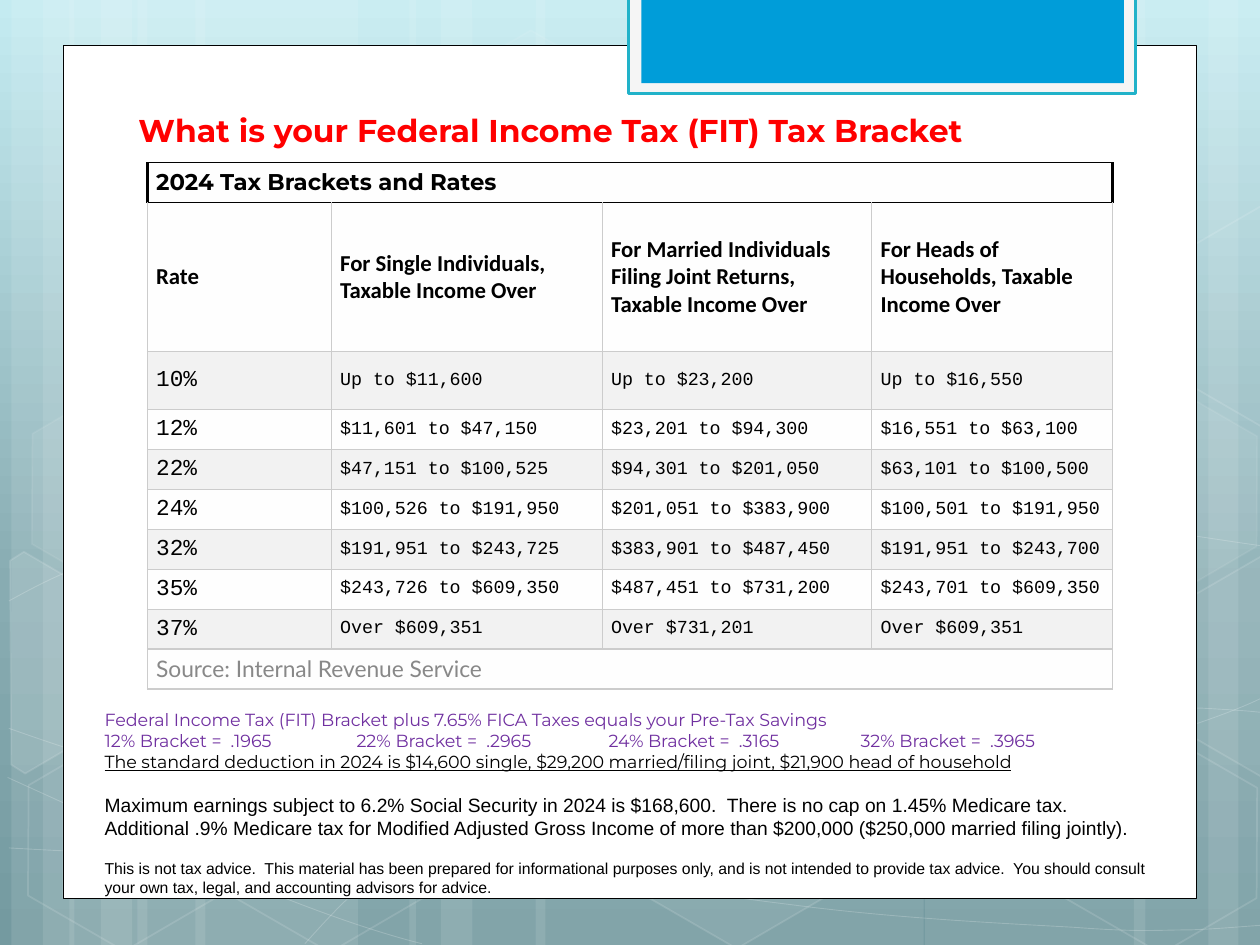
from copy import deepcopy
from dataclasses import dataclass

from lxml.etree import SubElement
from pptx import Presentation
from pptx.dml.color import RGBColor
from pptx.enum.shapes import MSO_SHAPE as Shape
from pptx.enum.text import MSO_ANCHOR as Anchor
from pptx.oxml.ns import qn
from pptx.util import Inches, Pt


@dataclass(frozen=True)
class Theme:
    sky: tuple = ((0, "C4EBF1"), (0.62, "88ACB2"), (1, "749AA0"))
    white: str = "FFFFFF"
    black: str = "000000"
    red: str = "FF0000"
    purple: str = "7030A0"
    grey: str = "888888"
    grid: str = "CCCCCC"
    row: str = "FEFEFE"
    band: str = "F2F2F2"
    frame: str = "F5F5F5"
    teal: str = "21B2C9"
    blue: str = "009DD9"
    title: float = 18
    head: float = 13
    amount: float = 10.5
    note: float = 10
    detail: float = 11
    small: float = 9


T = Theme()

BANDS = [(1.09, 1.75), (0.09, 0.5), (0.34, 0.83), (1.55, 1.75), (0.55, 0.5), (0.8, 0.83),
         (7.34, 1.75), (9.59, 0.5), (9, 0.83), (4.25, 3.08), (3.25, 0.5), (3.5, 0.83)]
CURVES = [
    [(0.07, 6.73), (0.61, 6.76), (1.15, 6.79), (1.9, 6.78), (2.65, 6.77), (3.58, 6.75),
     (4.58, 6.65), (5.58, 6.55), (7, 6.36), (7.92, 6.17), (8.83, 5.98), (9.77, 5.68), (10.07, 5.51)],
    [(0.07, 4.77), (0.36, 4.61), (0.65, 4.46), (1.21, 4.31), (1.78, 4.16), (2.59, 3.94),
     (3.47, 3.87), (4.36, 3.8), (5.44, 3.79), (6.54, 3.87), (7.64, 3.95), (9.47, 4.26), (10.07, 4.34)],
    [(0.06, 6.17), (1.27, 6.72), (2.47, 7.27), (3.35, 7.49)],
    [(0.07, 5.78), (0.38, 5.89), (0.7, 6), (1.28, 6.16), (1.86, 6.31), (2.73, 6.56), (3.57, 6.73),
     (4.4, 6.9), (5.45, 7.08), (6.28, 7.18), (7.11, 7.29), (8, 7.33), (8.53, 7.36),
     (9.06, 7.4), (9.19, 7.38), (9.45, 7.38), (9.71, 7.37), (9.89, 7.35), (10.07, 7.34)],
    [(2.42, 7.49), (2.6, 7.29), (2.78, 7.09), (3.02, 6.91), (3.26, 6.72), (3.6, 6.53), (3.88, 6.39),
     (4.16, 6.25), (4.33, 6.19), (4.69, 6.09), (5.06, 5.99), (5.73, 5.85), (6.08, 5.78),
     (6.44, 5.71), (6.49, 5.71), (6.8, 5.69), (7.11, 5.66), (7.6, 5.63), (7.94, 5.62),
     (8.29, 5.61), (8.86, 5.62), (8.86, 5.62), (9.08, 5.62), (9.31, 5.62), (9.53, 5.62),
     (9.71, 5.63), (9.88, 5.64), (9.97, 5.65), (10.06, 5.66), (10.03, 5.65), (10.06, 5.66)],
]
HEXAGONS = [(3.34, 0.36, 4, 8), (4.97, 5.89, 6, 12), (0.11, 5.91, 0, 12), (0.14, 3.12, 7, 8),
            (1.74, 5.92, 0, 12), (8.34, 5.93, 0, 12), (8.34, 3.14, 7, 8)]
CUT_HEXAGONS = [
    ([(0.08, 4.45), (0.19, 4.38), (0.96, 4.83), (0.95, 5.7), (0.2, 6.14), (0.09, 6.07)], 10),
    ([(9.26, 4.85), (10.02, 4.41), (10.09, 4.46), (10.09, 6.13), (10.02, 6.17), (9.26, 5.73)], 4),
    ([(9.26, 2.07), (10.02, 1.63), (10.1, 1.68), (10.09, 3.35), (10.02, 3.39), (9.26, 2.95)], 0),
]
COLUMNS = [1.46, 2.15, 2.14, 1.91]
HEIGHTS = [0.32, 1.18, 0.46] + [2.22 / 7] * 7
ROWS = [
    ("2024 Tax Brackets and Rates", "", "", ""),
    ("Rate", "For Single Individuals, Taxable Income Over",
     "For Married Individuals Filing Joint Returns, Taxable Income Over",
     "For Heads of Households, Taxable Income Over"),
    ("10%", "Up to $11,600", "Up to $23,200", "Up to $16,550"),
    ("12%", "$11,601 to $47,150", "$23,201 to $94,300", "$16,551 to $63,100"),
    ("22%", "$47,151 to $100,525", "$94,301 to $201,050", "$63,101 to $100,500"),
    ("24%", "$100,526 to $191,950", "$201,051 to $383,900", "$100,501 to $191,950"),
    ("32%", "$191,951 to $243,725", "$383,901 to $487,450", "$191,951 to $243,700"),
    ("35%", "$243,726 to $609,350", "$487,451 to $731,200", "$243,701 to $609,350"),
    ("37%", "Over $609,351", "Over $731,201", "Over $609,351"),
    ("Source: Internal Revenue Service", "", "", ""),
]


def rgb(color):
    return RGBColor.from_string(color)


def fade(sp, where, percent):
    for clr in sp._element.xpath(f"./p:spPr/{where}a:solidFill/a:srgbClr"):
        SubElement(clr, qn("a:alpha"), val=str(percent * 1000))


def style(sp, fill=None, line=None, width=1, fill_alpha=100, line_alpha=100):
    sp.shadow.inherit = False
    if fill and fill_alpha:
        sp.fill.solid()
        sp.fill.fore_color.rgb = rgb(fill)
        fade(sp, "", fill_alpha)
    else:
        sp.fill.background()
    if line:
        sp.line.color.rgb = rgb(line)
        sp.line.width = Pt(width)
        fade(sp, "a:ln/", line_alpha)
    else:
        sp.line.fill.background()
    return sp


def add_box(s, x, y, w, h, kind=Shape.RECTANGLE, **fmt):
    sp = s.shapes.add_shape(kind, Inches(x), Inches(y), Inches(w), Inches(h))
    return style(sp, **fmt)


def add_outline(s, points, close=False, **fmt):
    start, *rest = [(Inches(x), Inches(y)) for x, y in points]
    builder = s.shapes.build_freeform(*start)
    builder.add_line_segments(rest, close=close)
    return style(builder.convert_to_shape(), **fmt)


def add_curve(s, knots, **fmt):
    sp = add_outline(s, knots, **fmt)
    outline = sp._element.xpath(".//a:pathLst/*")[0]
    segments = outline.findall(qn("a:lnTo"))
    for i in range(0, len(segments), 3):
        curve = SubElement(outline, qn("a:cubicBezTo"))
        for segment in segments[i:i + 3]:
            curve.append(segment[0])
            outline.remove(segment)


def write(p, text, size=T.head, font="Arial", color=T.black, bold=False, underline=False,
          before=0, tabs=()):
    p.space_before = Pt(before)
    if tabs:
        stops = SubElement(p._p.get_or_add_pPr(), qn("a:tabLst"))
        for pos in tabs:
            SubElement(stops, qn("a:tab"), pos=str(Inches(pos)), algn="l")
    r = p.add_run()
    r.text = text
    r.font.size, r.font.name = Pt(size), font
    r.font.bold, r.font.underline = bold, underline
    r.font.color.rgb = rgb(color)


def add_text(s, x, y, w, h, lines, left=0.1, top=0.05):
    tf = s.shapes.add_textbox(Inches(x), Inches(y), Inches(w), Inches(h)).text_frame
    tf.word_wrap = True
    tf.margin_left, tf.margin_top = Inches(left), Inches(top)
    for i, (text, fmt) in enumerate(lines):
        write(tf.add_paragraph() if i else tf.paragraphs[0], text, **fmt)


def set_borders(cell, row):
    tcPr = cell._tc.get_or_add_tcPr()
    thin, black = (T.grid, 0.75), (T.black, 0.75)
    side = thin if row else (T.black, 1.5)
    edges = dict(L=side, R=side, T=thin if row > 1 else black, B=thin if row else black)
    for i, (name, (color, width)) in enumerate(edges.items()):
        ln = SubElement(tcPr, qn(f"a:ln{name}"), w=str(Pt(width)))
        SubElement(SubElement(ln, qn("a:solidFill")), qn("a:srgbClr"), val=color)
        tcPr.insert(i, ln)


def cell_format(row, col):
    if row == 0:
        return dict(font="Montserrat", bold=True)
    if row == 1:
        return dict(font="Calibri", bold=True)
    if row == len(ROWS) - 1:
        return dict(font="Lato", color=T.grey)
    return dict(font="Courier New", size=T.amount if col else T.head)


def add_brackets(s):
    table = s.shapes.add_table(len(ROWS), len(COLUMNS), Inches(1.17), Inches(1.29),
                               Inches(sum(COLUMNS)), Inches(sum(HEIGHTS))).table
    table.first_row = table.horz_banding = False
    for col, width in zip(table.columns, COLUMNS):
        col.width = Inches(width)
    for r, texts in enumerate(ROWS):
        table.rows[r].height = Inches(HEIGHTS[r])
        for c, text in enumerate(texts):
            cell = table.cell(r, c)
            cell.vertical_anchor = Anchor.MIDDLE
            cell.margin_left = cell.margin_right = Inches(0.07)
            cell.margin_top = cell.margin_bottom = Inches(0.03)
            cell.fill.solid()
            cell.fill.fore_color.rgb = rgb(T.band if 2 <= r < 9 and r % 2 == 0 else T.row)
            set_borders(cell, r)
            if text:
                write(cell.text_frame.paragraphs[0], text, **cell_format(r, c))
    for r in (0, len(ROWS) - 1):
        table.cell(r, 0).merge(table.cell(r, len(COLUMNS) - 1))


def add_backdrop(s):
    fill = s.background.fill
    fill.gradient()
    fill.gradient_angle = 270
    stops = s._element.xpath(".//a:gsLst")[0]
    stops.append(deepcopy(stops[0]))
    for stop, (position, color) in zip(fill.gradient_stops, T.sky):
        stop.position = position
        stop.color.rgb = rgb(color)
    for x, w in BANDS:
        add_box(s, x, 0, w, 7.5, fill=T.white, fill_alpha=10)
    for knots in CURVES:
        add_curve(s, knots, line=T.white, width=0.5, line_alpha=20)
    for x, y, fill_alpha, line_alpha in HEXAGONS:
        sp = add_box(s, x, y, 1.75, 1.52, Shape.HEXAGON, fill=T.white, line=T.white,
                     fill_alpha=fill_alpha, line_alpha=line_alpha)
        sp.adjustments[0], sp.adjustments[1] = 0.285, 1.155
        sp.rotation = 30
    for points, fill_alpha in CUT_HEXAGONS:
        add_outline(s, points, close=True, fill=T.white, line=T.white,
                    fill_alpha=fill_alpha, line_alpha=12)


def main():
    prs = Presentation()
    prs.slide_width, prs.slide_height = Inches(10), Inches(7.5)
    s = prs.slides.add_slide(prs.slide_layouts[6])
    add_backdrop(s)
    add_box(s, 0.5, 0.36, 9, 6.77, fill=T.white, line=T.black, width=0.5)
    add_box(s, 4.99, -0.02, 4.02, 0.76, fill=T.frame, line=T.teal, width=1.75)
    add_box(s, 5.09, -0.02, 3.83, 0.68, fill=T.blue)
    add_text(s, 1, 0.83, 7.58, 0.4, [("What is your Federal Income Tax (FIT) Tax Bracket",
             dict(size=T.title, font="Montserrat", color=T.red, bold=True))])
    note = dict(size=T.note, font="Montserrat")
    savings = dict(note, color=T.purple)
    add_text(s, 0.66, 5.41, 8.69, 1.77, [
        ("Federal Income Tax (FIT) Bracket plus 7.65% FICA Taxes equals your Pre-Tax Savings", savings),
        ("12% Bracket =  .1965\t22% Bracket =  .2965\t24% Bracket =  .3165\t32% Bracket =  .3965",
         dict(savings, tabs=(2, 4, 6))),
        ("The standard deduction in 2024 is $14,600 single, $29,200 married/filing joint, $21,900 head of household",
         dict(note, underline=True)),
        ("Maximum earnings subject to 6.2% Social Security in 2024 is $168,600.  There is no cap on 1.45% Medicare tax.",
         dict(size=T.detail, before=12)),
        ("Additional .9% Medicare tax for Modified Adjusted Gross Income of more than $200,000 ($250,000 married filing jointly).",
         dict(size=T.detail)),
        ("This is not tax advice.  This material has been prepared for informational purposes only, and is not intended to provide tax advice.  You should consult your own tax, legal, and accounting advisors for advice.",
         dict(size=T.small, before=11)),
    ], left=0.17, top=0.22)
    add_brackets(s)
    prs.save("out.pptx")


if __name__ == "__main__":
    main()
